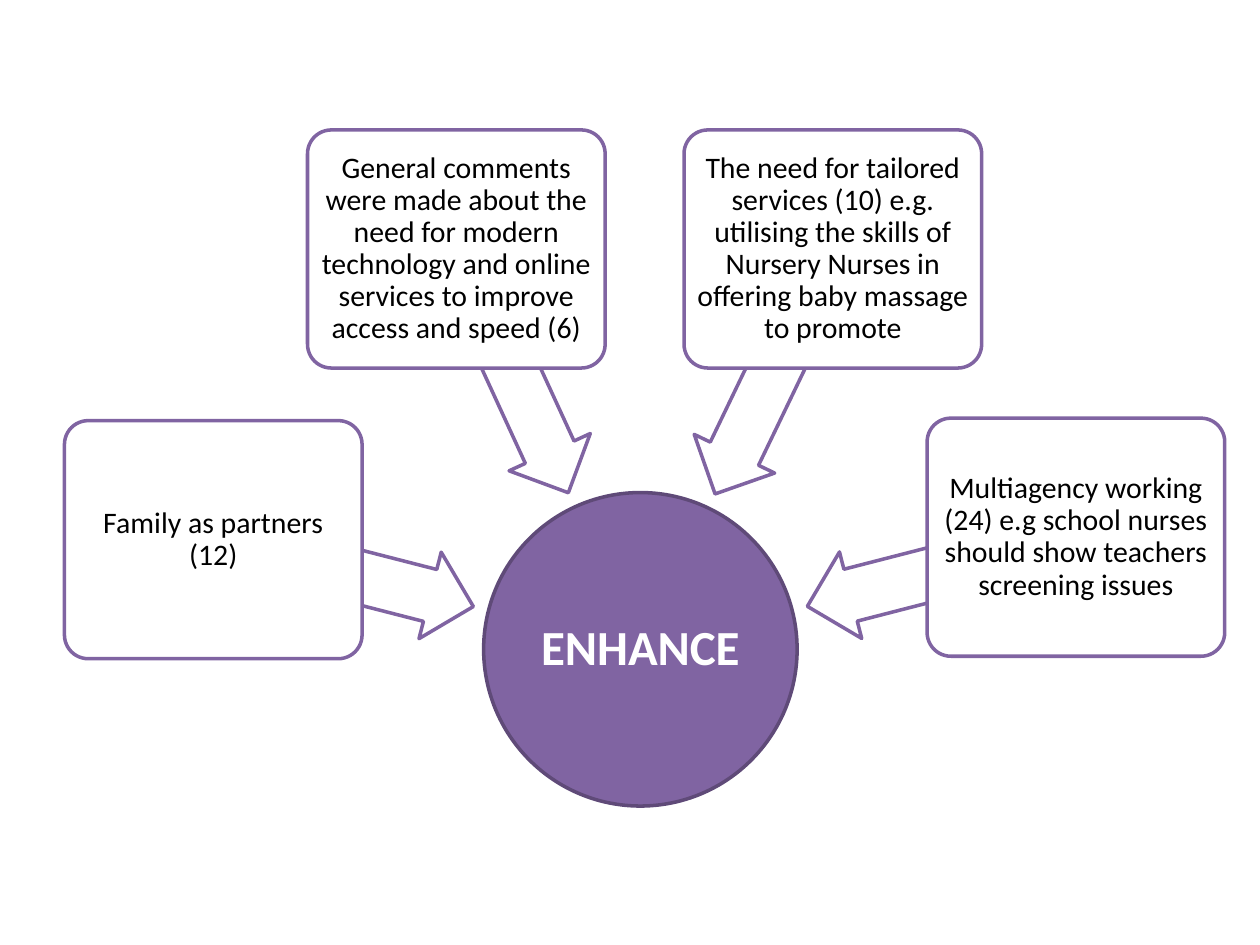
from math import atan2, cos, degrees, hypot, sin

from pptx import Presentation
from pptx.dml.color import RGBColor
from pptx.enum.shapes import MSO_SHAPE
from pptx.enum.text import MSO_ANCHOR, PP_ALIGN
from pptx.util import Cm, Pt

COLORS = {"purple": "8064A2", "dark": "5F4A78", "white": "FFFFFF", "black": "000000"}
FONT = "Calibri"

BOX_W, BOX_H = 6, 4.8
ARROW_H = 1.8
ARROW_STOP = 1.1  # arrow tips end at this multiple of the hub radius
HUB = (9.75, 9.93, 6.32)  # left, top, diameter
THEMES = [  # left, top, text
    (1.3, 8.48, "Family as partners\v(12)"),
    (6.2, 2.62, "General comments were made about the need for modern technology "
                "and online services to improve access and speed (6)"),
    (13.79, 2.62, "The need for tailored services (10) e.g. utilising the skills of "
                  "Nursery Nurses in offering baby massage to promote"),
    (18.69, 8.43, "Multiagency working (24) e.g school nurses should show teachers "
                  "screening issues"),
]


def color(name):
    return RGBColor.from_string(COLORS[name])


def add_outlined(s, kind, left, top, width, height, fill="white", line="purple"):
    sp = s.shapes.add_shape(kind, Cm(left), Cm(top), Cm(width), Cm(height))
    sp.shadow.inherit = False
    sp.fill.solid()
    sp.fill.fore_color.rgb = color(fill)
    sp.line.color.rgb = color(line)
    sp.line.width = Pt(2)
    return sp


def set_label(sp, text, size, font_color, inset, bold=False):
    tf = sp.text_frame
    tf.text = text
    tf.word_wrap = True
    tf.vertical_anchor = MSO_ANCHOR.MIDDLE
    tf.margin_left = tf.margin_right = tf.margin_top = tf.margin_bottom = Cm(inset)
    p = tf.paragraphs[0]
    p.alignment = PP_ALIGN.CENTER
    p.line_spacing = 0.9
    for r in p.runs:
        r.font.name = FONT
        r.font.size = Pt(size)
        r.font.bold = bold
        r.font.color.rgb = color(font_color)


def add_hub(s, left, top, diameter):
    sp = add_outlined(s, MSO_SHAPE.OVAL, left, top, diameter, diameter, "purple", "dark")
    set_label(sp, "ENHANCE", 28, "white", 0.05, bold=True)


def add_arrow(s, x, y, hub_x, hub_y, hub_radius):
    """Point a block arrow from (x, y) towards the hub, stopping just outside it."""
    dx, dy = hub_x - x, hub_y - y
    angle = atan2(dy, dx)
    length = hypot(dx, dy) - ARROW_STOP * hub_radius
    mid_x, mid_y = x + cos(angle) * length / 2, y + sin(angle) * length / 2
    sp = add_outlined(s, MSO_SHAPE.LEFT_ARROW, mid_x - length / 2, mid_y - ARROW_H / 2,
                      length, ARROW_H)
    sp.adjustments[0] = 0.6
    sp.adjustments[1] = 0.5
    sp.rotation = degrees(angle) + 180


def add_theme(s, left, top, text):
    sp = add_outlined(s, MSO_SHAPE.ROUNDED_RECTANGLE, left, top, BOX_W, BOX_H)
    sp.adjustments[0] = 0.1
    set_label(sp, text, 17, "black", 0.1)


def add_converging_diagram(s, hub, themes):
    left, top, diameter = hub
    radius = diameter / 2
    add_hub(s, *hub)
    for x, y, text in themes:
        add_arrow(s, x + BOX_W / 2, y + BOX_H / 2, left + radius, top + radius, radius)
        add_theme(s, x, y, text)


def main():
    prs = Presentation()
    prs.slide_width, prs.slide_height = Cm(25.4), Cm(19.05)
    s = prs.slides.add_slide(prs.slide_layouts[6])
    add_converging_diagram(s, HUB, THEMES)
    prs.save("out.pptx")


if __name__ == "__main__":
    main()
